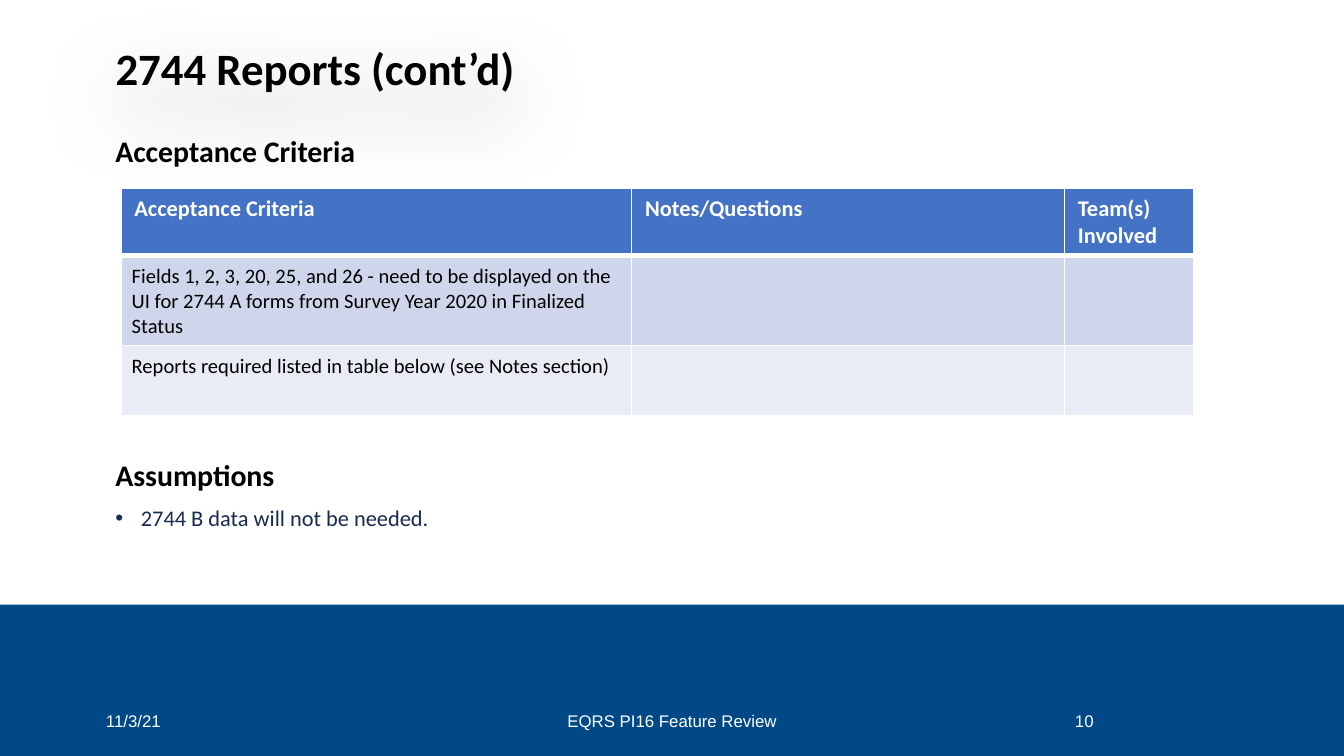
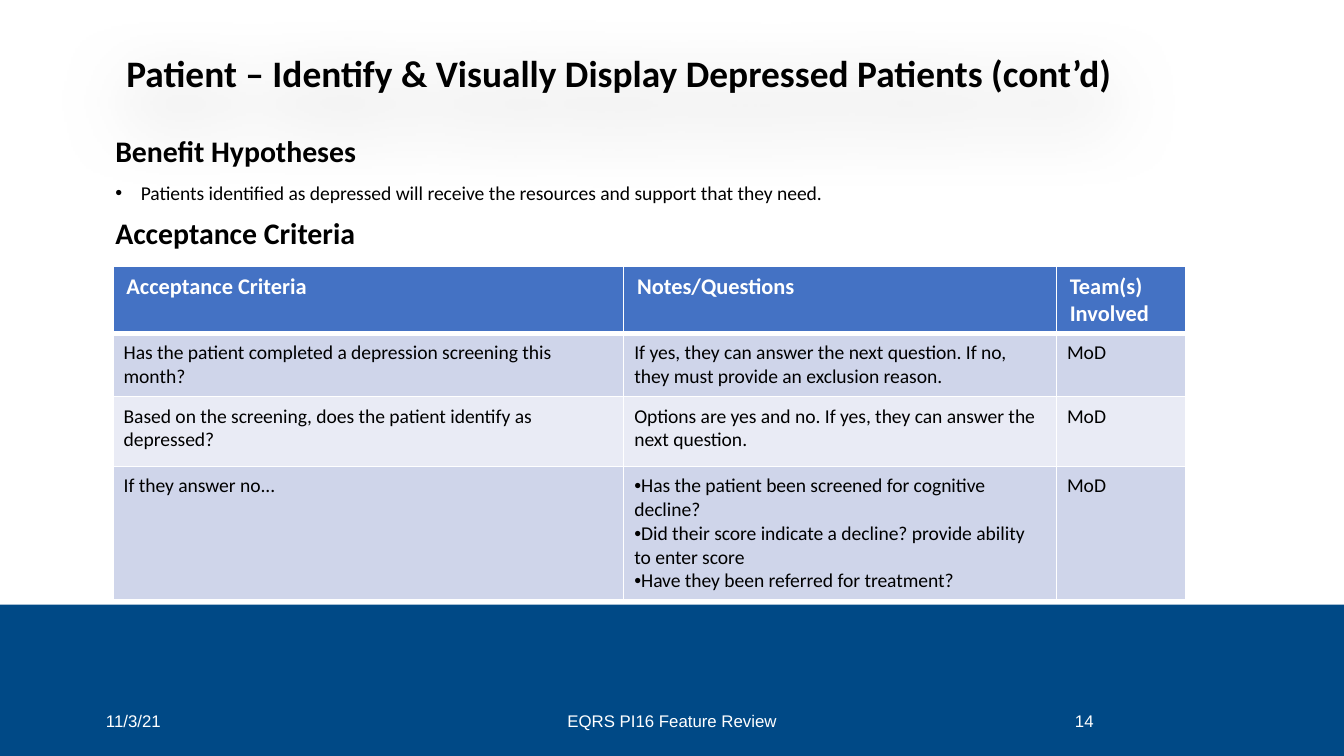
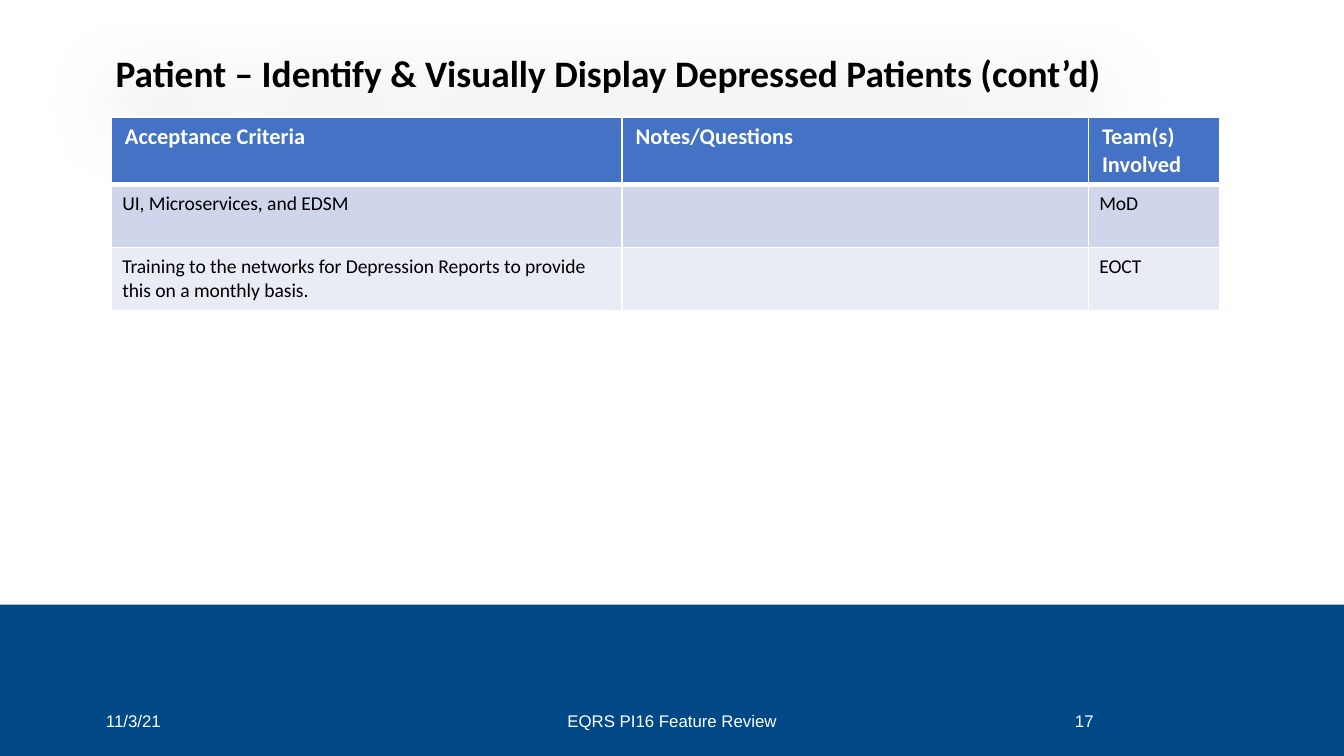
from pptx import Presentation
from pptx.dml.color import RGBColor
from pptx.enum.shapes import MSO_SHAPE
from pptx.enum.text import MSO_ANCHOR, MSO_AUTO_SIZE, PP_ALIGN
from pptx.oxml import parse_xml
from pptx.oxml.ns import nsdecls
from pptx.util import Inches, Pt

RECT = MSO_SHAPE.RECTANGLE
MIDDLE, BOTTOM = MSO_ANCHOR.MIDDLE, MSO_ANCHOR.BOTTOM
LEFT, CENTER = PP_ALIGN.LEFT, PP_ALIGN.CENTER
NO_FIT = MSO_AUTO_SIZE.NONE

BLACK = RGBColor(0x00, 0x00, 0x00)
WHITE = RGBColor(0xFF, 0xFF, 0xFF)
NAVY = RGBColor(0x17, 0x2B, 0x4D)
BAND = RGBColor(0x00, 0x49, 0x86)
HEADER = RGBColor(0x44, 0x72, 0xC4)
STRIPES = (RGBColor(0xCF, 0xD5, 0xEA), RGBColor(0xE9, 0xEB, 0xF5))

SLIDE_WIDTH = Inches(10)
SLIDE_HEIGHT = SLIDE_WIDTH * 9 // 16
BODY_FONT, FOOTER_FONT = "Calibri", "Arial"
TITLE_BOX = (0.76, 0.21, 8.38, 0.55)
COLUMNS = ("Acceptance Criteria", "Notes/Questions", "Team(s) Involved")
DEPRESSED_TITLE = "Patient – Identify & Visually Display Depressed Patients (cont’d)"


def format_runs(p, size, color=BLACK, bold=False, font=BODY_FONT):
    """Give every run of a paragraph the same font."""
    for r in p.runs:
        r.font.name, r.font.size, r.font.bold = font, Pt(size), bold
        r.font.color.rgb = color


def add_bullet(p, indent=0):
    """Put a round bullet with a hanging indent on a paragraph."""
    pPr = p._p.get_or_add_pPr()
    pPr.set("marL", str(Inches(indent)))
    pPr.set("indent", str(-Inches(indent)))
    pPr.append(parse_xml(f'<a:buFont {nsdecls("a")} typeface="Arial"/>'))
    pPr.append(parse_xml(f'<a:buChar {nsdecls("a")} char="•"/>'))


def add_textbox(s, box):
    """Add a wrapping text box and return its text frame."""
    tf = s.shapes.add_textbox(*map(Inches, box)).text_frame
    tf.word_wrap = True
    return tf


def add_title(s, text, size, indent=0):
    """Place and format the title with its soft shadow."""
    title = s.shapes.title
    title.left, title.top, title.width, title.height = map(Inches, TITLE_BOX)
    tf = title.text_frame
    tf.text = text
    tf.auto_size, tf.vertical_anchor = NO_FIT, BOTTOM
    tf.margin_left = Inches(0.1 + indent)
    p = tf.paragraphs[0]
    p.alignment, p.line_spacing = LEFT, 0.9
    format_runs(p, size, bold=True)
    title._element.spPr.append(parse_xml(
        f'<a:effectLst {nsdecls("a")}><a:outerShdw blurRad="{Inches(0.6)}" '
        f'dist="{Inches(0.2)}" dir="5400000" algn="t" rotWithShape="0">'
        '<a:srgbClr val="000000"><a:alpha val="35000"/></a:srgbClr>'
        '</a:outerShdw></a:effectLst>'))


def add_footer(s, number):
    """Draw the blue band with date, deck name and slide number."""
    top = 4.5
    band = s.shapes.add_shape(RECT, 0, Inches(top), SLIDE_WIDTH,
                              SLIDE_HEIGHT - Inches(top))
    band.shadow.inherit = False
    band.fill.solid()
    band.fill.fore_color.rgb = BAND
    band.line.fill.background()
    for text, left, width, align in (("11/3/21", 0.69, 2.25, LEFT),
                                     ("EQRS PI16 Feature Review", 3.31, 3.38, CENTER),
                                     (str(number), 7.9, 0.38, LEFT)):
        tf = add_textbox(s, (left, top + 0.71, width, 0.3))
        tf.vertical_anchor = MIDDLE
        p = tf.paragraphs[0]
        p.text, p.alignment = text, align
        format_runs(p, 9, WHITE, font=FOOTER_FONT)


def add_body(s, box, lines, size=10.5, color=BLACK):
    """Write headings and bullets, given as (kind, text) pairs."""
    tf = add_textbox(s, box)
    for i, (kind, text) in enumerate(lines):
        p = tf.paragraphs[0] if i == 0 else tf.add_paragraph()
        p.text, p.line_spacing = text, 0.9
        if i:
            p.space_before = Pt(7.5)
        if kind == "bullet":
            add_bullet(p, 0.19)
            format_runs(p, size, color)
        else:
            format_runs(p, 16, bold=True)


def set_borders(cell, top, bottom):
    """Draw white borders with the given top and bottom widths."""
    tcPr = cell._tc.get_or_add_tcPr()
    for side, width in (("L", 1), ("R", 1), ("T", top), ("B", bottom)):
        tcPr.append(parse_xml(
            f'<a:ln{side} {nsdecls("a")} w="{Pt(width)}"><a:solidFill>'
            f'<a:srgbClr val="{WHITE}"/></a:solidFill></a:ln{side}>'))


def fill_cell(cell, content, row, size):
    """Fill one cell; a tuple as content becomes a bulleted list."""
    set_borders(cell, 3 if row == 1 else 1, 3 if row == 0 else 1)
    cell.fill.solid()
    cell.fill.fore_color.rgb = STRIPES[(row - 1) % 2] if row else HEADER
    if not content:
        return
    bulleted = isinstance(content, tuple)
    cell.text = "\n".join(content) if bulleted else content
    if row:
        cell.margin_left = cell.margin_right = Inches(0.08)
        cell.margin_top = cell.margin_bottom = Inches(0.06)
    for p in cell.text_frame.paragraphs:
        if bulleted:
            add_bullet(p)
        if row:
            format_runs(p, size)
        else:
            format_runs(p, 12, WHITE, bold=True)


def add_criteria_table(s, left, top, widths, heights, rows, size=10.5):
    """Add the acceptance criteria table below its shared header row."""
    table = s.shapes.add_table(len(heights), len(widths), Inches(left), Inches(top),
                               Inches(sum(widths)), Inches(sum(heights))).table
    for column, width in zip(table.columns, widths):
        column.width = Inches(width)
    for i, (height, contents) in enumerate(zip(heights, [COLUMNS, *rows])):
        table.rows[i].height = Inches(height)
        for j, content in enumerate(contents):
            fill_cell(table.cell(i, j), content, i, size)


def add_slide(prs, title, size, number, indent=0):
    """Add a title-only slide with its title and footer."""
    s = prs.slides.add_slide(prs.slide_layouts[5])
    add_footer(s, number)
    add_title(s, title, size, indent)
    return s


def build_reports(prs):
    """Build the slide on the 2744 reports."""
    s = add_slide(prs, "2744 Reports (cont’d)", 24, 10)
    add_body(s, (0.76, 0.97, 8.56, 0.4), [("heading", "Acceptance Criteria")])
    add_body(s, (0.76, 3.38, 8.56, 1.03), [
        ("heading", "Assumptions"),
        ("bullet", "2744 B data will not be needed."),
    ], 12, NAVY)
    add_criteria_table(s, 0.9, 1.4, (3.8, 3.22, 0.96), (0.49, 0.67, 0.52), [
        ("Fields 1, 2, 3, 20, 25, and 26 - need to be displayed on the UI for "
         "2744 A forms from Survey Year 2020 in Finalized Status", "", ""),
        ("Reports required listed in table below (see Notes section)", "", ""),
    ], 11)


def build_screening(prs):
    """Build the slide on the depression screening questions."""
    s = add_slide(prs, DEPRESSED_TITLE, 20, 14, 0.08)
    add_body(s, (0.76, 0.97, 8.56, 1), [
        ("heading", "Benefit Hypotheses"),
        ("bullet", "Patients identified as depressed will receive the resources "
                   "and support that they need."),
        ("heading", "Acceptance Criteria"),
    ])
    add_criteria_table(s, 0.84, 1.98, (3.8, 3.22, 0.96), (0.49, 0.47, 0.52, 0.99), [
        ("Has the patient completed a depression screening this month?",
         "If yes, they can answer the next question. If no, they must provide "
         "an exclusion reason.", "MoD"),
        ("Based on the screening, does the patient identify as depressed?",
         "Options are yes and no. If yes, they can answer the next question.", "MoD"),
        ("If they answer no...",
         ("Has the patient been screened for cognitive decline?",
          "Did their score indicate a decline? provide ability to enter score",
          "Have they been referred for treatment?"), "MoD"),
    ])


def build_training(prs):
    """Build the slide on services and training."""
    s = add_slide(prs, DEPRESSED_TITLE, 20, 17)
    add_criteria_table(s, 0.83, 0.87, (3.8, 3.47, 0.98), (0.5, 0.47, 0.47), [
        ("UI, Microservices, and EDSM", "", "MoD"),
        ("Training to the networks for Depression Reports to provide this on a "
         "monthly basis.", "", "EOCT"),
    ])


def main():
    """Build the deck and save it."""
    prs = Presentation()
    prs.slide_width, prs.slide_height = SLIDE_WIDTH, SLIDE_HEIGHT
    build_reports(prs)
    build_screening(prs)
    build_training(prs)
    prs.save("out.pptx")


if __name__ == "__main__":
    main()
